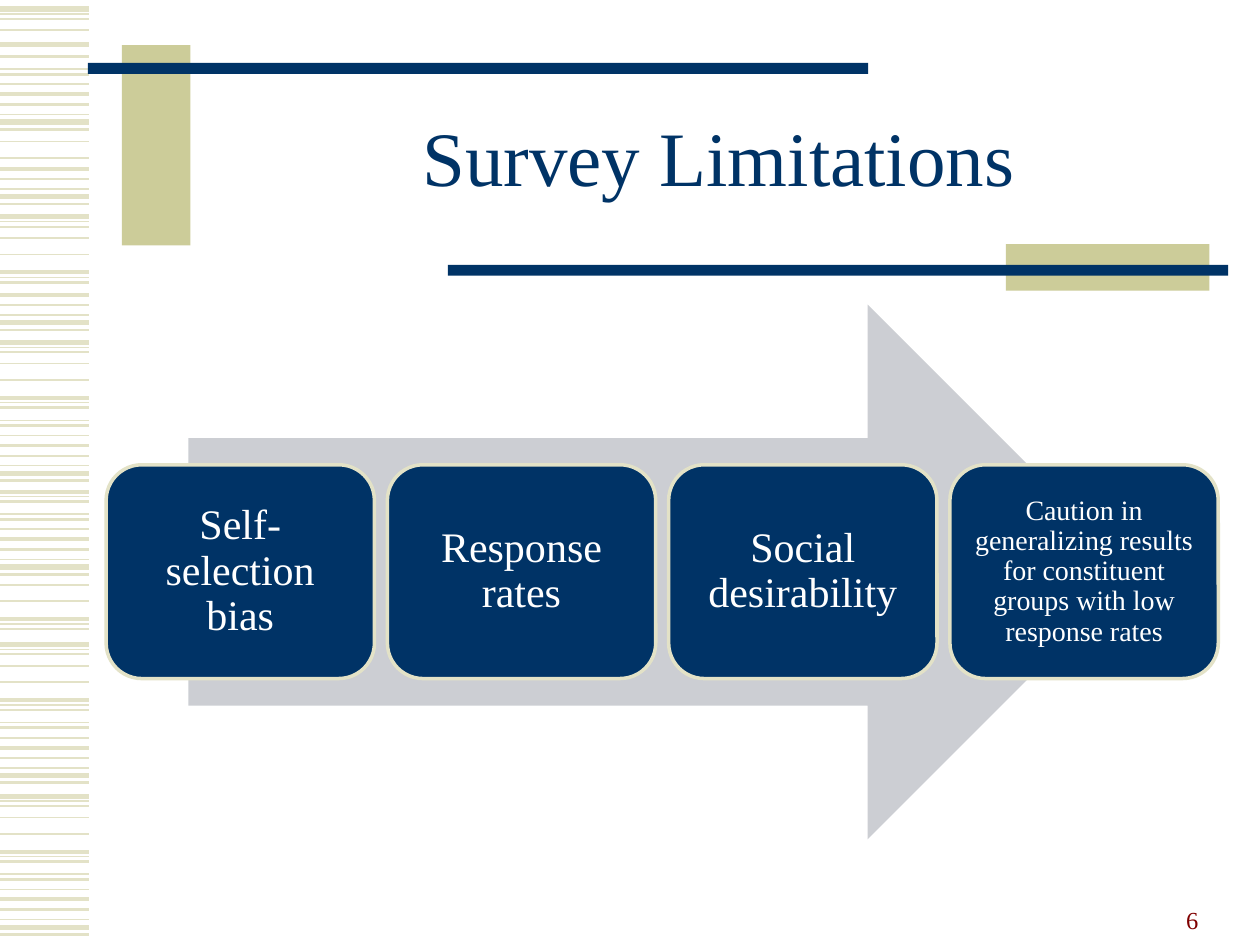
from pptx import Presentation
from pptx.dml.color import RGBColor
from pptx.enum.shapes import MSO_CONNECTOR, MSO_SHAPE
from pptx.enum.text import MSO_ANCHOR, MSO_AUTO_SIZE, PP_ALIGN
from pptx.util import Cm, Pt
from lxml.etree import SubElement
from pptx.oxml.ns import qn

NAVY, KHAKI, PALE, GREY = "003366", "CCCC99", "E3E2C7", "CCCED3"


def paint(color_format, hex_color):
    color_format.rgb = RGBColor.from_string(hex_color)


def write(frame, text, size, color, align, anchor, spacing=1.0, inset=None):
    frame.text = text
    layout = {"word_wrap": True, "auto_size": MSO_AUTO_SIZE.NONE, "vertical_anchor": anchor}
    if inset is not None:
        for side in ("left", "top", "right", "bottom"):
            layout[f"margin_{side}"] = Cm(inset)
    for name, value in layout.items():
        setattr(frame, name, value)
    paragraph = frame.paragraphs[0]
    for name, value in {"alignment": align, "line_spacing": spacing}.items():
        setattr(paragraph, name, value)
    font = paragraph.runs[0].font
    for name, value in {"name": "Times New Roman", "size": Pt(size)}.items():
        setattr(font, name, value)
    paint(font.color, color)


prs = Presentation()
prs.slide_width, prs.slide_height = Cm(25.4), Cm(19.05)
slide = prs.slides.add_slide(prs.slide_layouts[5])
shapes = slide.shapes

# Striped left margin: one pattern of (offset in cm, weight in pt), used whole or in part
stripe_pattern = [
    (0, 3), (0.1, 0.75), (0.2, 1), (0.43, 1), (0.76, 1), (1.12, 2.25),
    (1.22, 0.75), (1.32, 1.5), (1.57, 0.75), (1.68, 1.5), (1.88, 1),
    (2.08, 2.25), (2.29, 1.5), (2.49, 0.75), (2.64, 3), (2.79, 1.5),
]
# Pattern start in cm, first stripe, end of range
stripe_bands = [
    (0.18, 0, 4), (0.89, 0, 1), (-0.18, 7, 16), (2.42, 3, 5),
    (1.32, 11, 16), (4.37, 0, 8), (3.86, 11, 16), (6.9, 0, 16),
    (8.79, 5, 16), (11.36, 3, 8), (12.99, 0, 16), (16.05, 0, 16),
]
for start, first, end in stripe_bands:
    for offset, weight in stripe_pattern[first:end]:
        y = Cm(start + offset)
        stripe = shapes.add_connector(MSO_CONNECTOR.STRAIGHT, 0, y, Cm(1.8), y)
        paint(stripe.line.color, PALE)
        stripe.line.width = Pt(weight)
        SubElement(stripe.element.spPr, qn("a:effectLst"))

# Title bars and the large arrow
for kind, left, top, width, height, color in [
    (MSO_SHAPE.RECTANGLE, 2.46, 0.91, 1.38, 4.04, KHAKI),
    (MSO_SHAPE.RECTANGLE, 1.77, 1.27, 15.73, 0.22, NAVY),
    (MSO_SHAPE.RECTANGLE, 20.28, 4.92, 4.1, 0.94, KHAKI),
    (MSO_SHAPE.RECTANGLE, 9.03, 5.34, 15.73, 0.22, NAVY),
    (MSO_SHAPE.RIGHT_ARROW, 3.8, 6.14, 19.08, 10.78, GREY),
]:
    block = shapes.add_shape(kind, Cm(left), Cm(top), Cm(width), Cm(height))
    block.shadow.inherit = False
    block.fill.solid()
    paint(block.fill.fore_color, color)
    block.line.fill.background()

# Title
title = shapes.title
for name, value in {"left": 4.24, "top": 1.7, "width": 20.5, "height": 3.18}.items():
    setattr(title, name, Cm(value))
write(title.text_frame, "Survey Limitations", 44, NAVY,
      PP_ALIGN.CENTER, MSO_ANCHOR.MIDDLE, 0.85)

# Limitations along the arrow
limitations = [
    ("Self-selection bias", 24, 0.25),
    ("Response rates", 24, 0.25),
    ("Social desirability", 24, 0.25),
    ("Caution in generalizing results for constituent groups with low response rates", 16, 0.17),
]
for i, (text, size, inset) in enumerate(limitations):
    limitation = shapes.add_shape(MSO_SHAPE.ROUNDED_RECTANGLE,
                                  Cm(2.14 + 5.67 * i), Cm(9.37), Cm(5.41), Cm(4.31))
    limitation.shadow.inherit = False
    limitation.fill.solid()
    paint(limitation.fill.fore_color, NAVY)
    paint(limitation.line.color, PALE)
    limitation.line.width = Pt(2)
    write(limitation.text_frame, text, size, "FFFFFF",
          PP_ALIGN.CENTER, MSO_ANCHOR.MIDDLE, 0.9, inset)

# Page number
page_number = shapes.add_textbox(Cm(18.31), Cm(17.7), Cm(6.1), Cm(1.27))
write(page_number.text_frame, "6", 14, "800000", PP_ALIGN.RIGHT, MSO_ANCHOR.BOTTOM)

prs.save("out.pptx")
